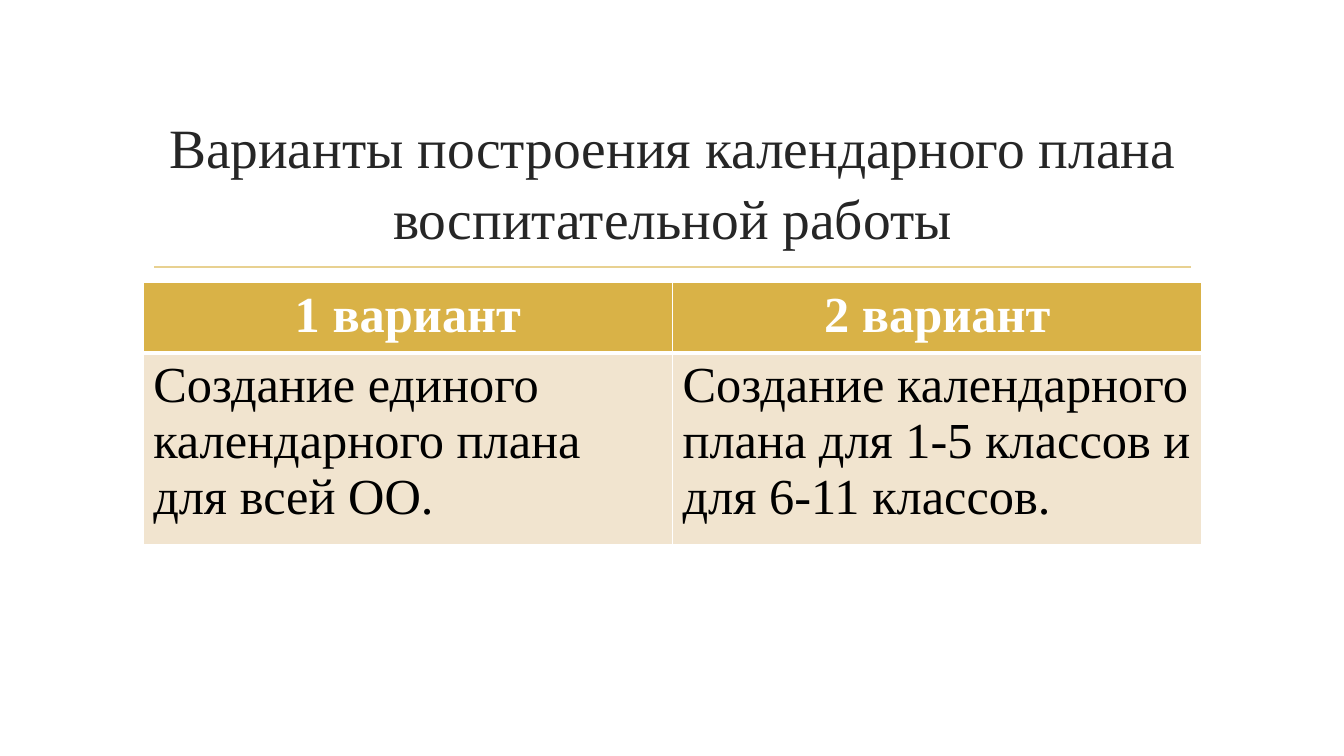
from lxml.etree import SubElement
from pptx import Presentation
from pptx.dml.color import RGBColor
from pptx.enum.shapes import MSO_CONNECTOR
from pptx.enum.text import MSO_ANCHOR, PP_ALIGN
from pptx.oxml.ns import qn
from pptx.util import Inches, Pt

SLIDE_W, SLIDE_H = Inches(13.33), Inches(7.5)
FONT = "Times New Roman"
WHITE = RGBColor(0xFF, 0xFF, 0xFF)
BLACK = RGBColor(0x00, 0x00, 0x00)
DARK = RGBColor(0x26, 0x26, 0x26)
GOLD = RGBColor(0xD9, 0xB2, 0x47)
PALE_GOLD = RGBColor(0xE8, 0xD1, 0x91)
CREAM = RGBColor(0xF1, 0xE4, 0xCF)

TITLE = "Варианты построения календарного плана воспитательной работы"
VARIANTS = [
    ["1 вариант", "2 вариант"],
    ["Создание единого календарного плана для всей ОО.",
     "Создание календарного плана для 1-5 классов и для 6-11 классов."],
]
# One look per table row; "borders" are widths in points
ROW_LOOKS = [
    {"height": 0.65, "fill": GOLD, "align": PP_ALIGN.CENTER,
     "font": {"size": Pt(36), "bold": True}, "color": WHITE,
     "borders": {"L": 1, "R": 1, "T": 1, "B": 3}},
    {"height": 1.75, "fill": CREAM, "align": PP_ALIGN.LEFT,
     "font": {"size": Pt(36), "bold": False}, "color": BLACK,
     "borders": {"L": 1, "R": 1, "T": 3, "B": 1}},
]


def across(inches):
    """Length as a share of the slide's width."""
    return round(SLIDE_W * inches / 13.33)


def down(inches):
    """Length as a share of the slide's height."""
    return round(SLIDE_H * inches / 7.5)


def write(tf, text, align, color, font):
    p = tf.paragraphs[0]
    p.alignment = align
    r = p.add_run()
    r.text = text
    r.font.color.rgb = color
    for name, value in {"name": FONT, **font}.items():
        setattr(r.font, name, value)
    return p


def add_title(s, text):
    sp = s.shapes.add_textbox(across(1.42), down(1.07), across(10.5), down(1.43))
    tf = sp.text_frame
    for name, value in {"word_wrap": True, "vertical_anchor": MSO_ANCHOR.MIDDLE}.items():
        setattr(tf, name, value)
    p = write(tf, text, PP_ALIGN.CENTER, DARK, {"size": Pt(39.6)})
    p.line_spacing = 1.07


def add_rule(s):
    rule = s.shapes.add_connector(MSO_CONNECTOR.STRAIGHT, across(1.53), down(2.65),
                                  across(11.81), down(2.65))
    rule.line.color.rgb = PALE_GOLD
    rule.line.width = Pt(1.25)
    SubElement(rule._element.spPr, qn("a:effectLst"))


def add_borders(cell, widths):
    tc_pr = cell._tc.get_or_add_tcPr()
    for i, (side, width) in enumerate(widths.items()):
        ln = SubElement(tc_pr, qn(f"a:ln{side}"), w=str(Pt(width)))
        fill = SubElement(ln, qn("a:solidFill"))
        SubElement(fill, qn("a:srgbClr"), val=str(WHITE))
        tc_pr.insert(i, ln)  # borders come before the cell fill


def add_variants_table(s):
    height = sum(look["height"] for look in ROW_LOOKS)
    table = s.shapes.add_table(len(VARIANTS), len(VARIANTS[0]), across(1.42), down(2.8),
                               across(10.5), down(height)).table
    for row, texts, look in zip(table.rows, VARIANTS, ROW_LOOKS):
        row.height = down(look["height"])
        for cell, text in zip(row.cells, texts):
            cell.fill.solid()
            cell.fill.fore_color.rgb = look["fill"]
            add_borders(cell, look["borders"])
            write(cell.text_frame, text, look["align"], look["color"], look["font"])


def main():
    prs = Presentation()
    prs.slide_width, prs.slide_height = SLIDE_W, SLIDE_H
    s = prs.slides.add_slide(prs.slide_layouts[6])
    # Heading
    add_rule(s)
    add_title(s, TITLE)
    # Comparison of the two variants
    add_variants_table(s)
    prs.save("out.pptx")


if __name__ == "__main__":
    main()
